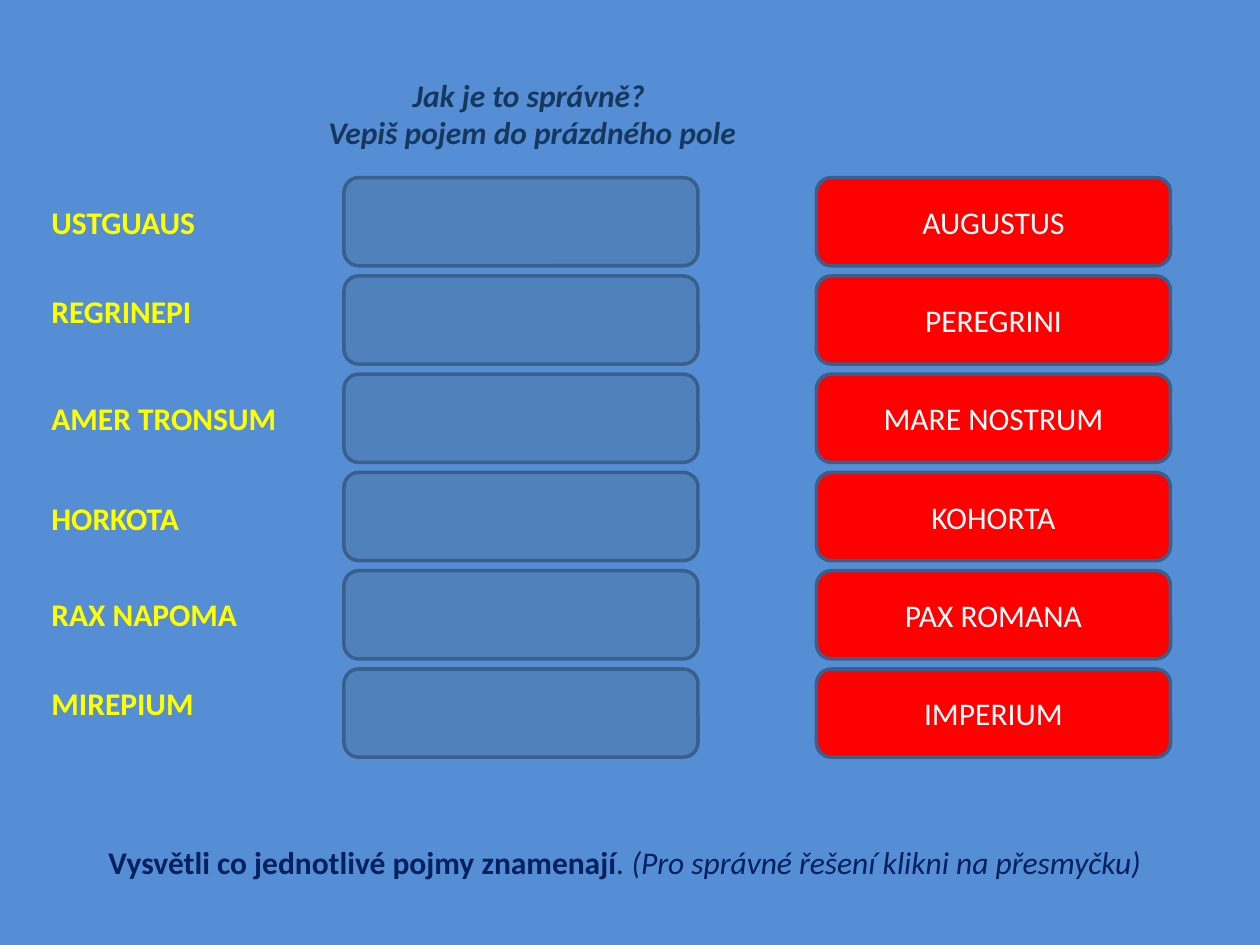
from pptx import Presentation, util as u
from pptx.dml.color import RGBColor
from pptx.enum import shapes, text

# Content: scrambled term, its top in inches, solution
TERMS = [
    ("USTGUAUS", 1.56, "AUGUSTUS"),
    ("REGRINEPI", 2.27, "PEREGRINI"),
    ("AMER TRONSUM", 3.12, "MARE NOSTRUM"),
    ("HORKOTA", 3.91, "KOHORTA"),
    ("RAX NAPOMA", 4.67, "PAX ROMANA"),
    ("MIREPIUM", 5.38, "IMPERIUM"),
]
HEADING = ["Jak je to správně? ", "Vepiš pojem do prázdného pole"]
TASK, HINT = "Vysvětli co jednotlivé pojmy znamenají", ". (Pro správné řešení klikni na přesmyčku)"

# Grid in inches
LABEL_LEFT, ANSWER_LEFT, SOLUTION_LEFT = 0.31, 2.73, 6.48
BOX_WIDTH, BOX_HEIGHT = 2.81, 0.7
FIRST_ROW, ROW_STEP = 1.41, 0.78
LABEL_WIDTH, LINE_HEIGHT = 2.27, 0.4

CENTER = text.PP_ALIGN.CENTER
LEFT = text.PP_ALIGN.LEFT


def color(value):
    return RGBColor.from_string(value)


def write(shape, lines, alignment, anchor=text.MSO_ANCHOR.TOP):
    """Each line is a list of (words, colour, font format) runs."""
    frame = shape.text_frame
    frame_format = {"word_wrap": True, "auto_size": text.MSO_AUTO_SIZE.NONE,
                    "vertical_anchor": anchor}
    for name, value in frame_format.items():
        setattr(frame, name, value)
    for index, runs in enumerate(lines):
        paragraph = frame.add_paragraph() if index else frame.paragraphs[0]
        paragraph.alignment = alignment
        for words, font_color, font_format in runs:
            run = paragraph.add_run()
            run.text = words
            run.font.color.rgb = color(font_color)
            for name, value in {"name": "Calibri", "size": u.Pt(18), **font_format}.items():
                setattr(run.font, name, value)


def add_text(slide, left, top, width, runs, alignment):
    box = slide.shapes.add_textbox(*map(u.Inches, (left, top, width, LINE_HEIGHT)))
    write(box, [runs], alignment)


def add_box(slide, left, top, fill):
    box = slide.shapes.add_shape(
        shapes.MSO_SHAPE.ROUNDED_RECTANGLE,
        *map(u.Inches, (left, top, BOX_WIDTH, BOX_HEIGHT)))
    box.shadow.inherit = False
    box.fill.solid()
    box.fill.fore_color.rgb = color(fill)
    box.line.color.rgb = color("3A5F8C")
    box.line.width = u.Pt(2)
    return box


def main():
    presentation = Presentation()
    presentation.slide_width, presentation.slide_height = u.Inches(10), u.Inches(7.5)
    slide = presentation.slides.add_slide(presentation.slide_layouts[5])
    slide.background.fill.solid()
    slide.background.fill.fore_color.rgb = color("558ED5")

    # Heading
    title = slide.shapes.title
    place = {"left": 1.88, "top": 0.55, "width": 4.69, "height": 0.71}
    for name, value in place.items():
        setattr(title, name, u.Inches(value))
    heading_format = {"bold": True, "italic": True}
    write(title, [[(line, "17375E", heading_format)] for line in HEADING], CENTER)

    # Rows: scrambled term, empty answer field, solution
    for row, (scrambled, label_top, solution) in enumerate(TERMS):
        top = FIRST_ROW + row * ROW_STEP
        add_text(slide, LABEL_LEFT, label_top, LABEL_WIDTH,
                 [(scrambled, "FFFF00", {"bold": True})], LEFT)
        add_box(slide, ANSWER_LEFT, top, "4F81BD")
        solution_box = add_box(slide, SOLUTION_LEFT, top, "FF0000")
        write(solution_box, [[(solution, "FFFFFF", {})]], CENTER, text.MSO_ANCHOR.MIDDLE)

    # Task below the rows
    add_text(slide, LABEL_LEFT, 6.64, 9.3,
             [(TASK, "002060", {"bold": True}), (HINT, "002060", {"italic": True})], CENTER)

    presentation.save("out.pptx")


if __name__ == "__main__":
    main()
